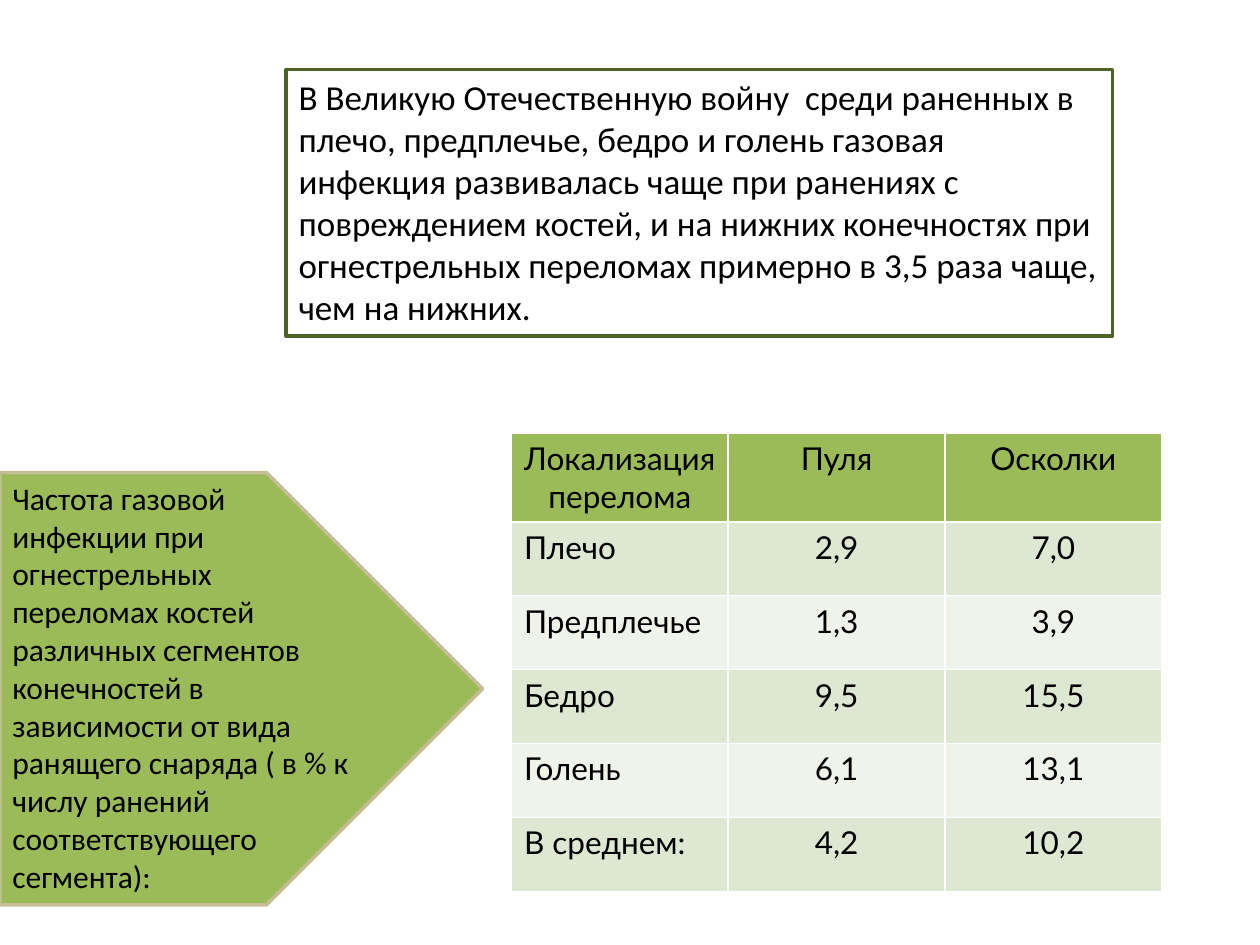
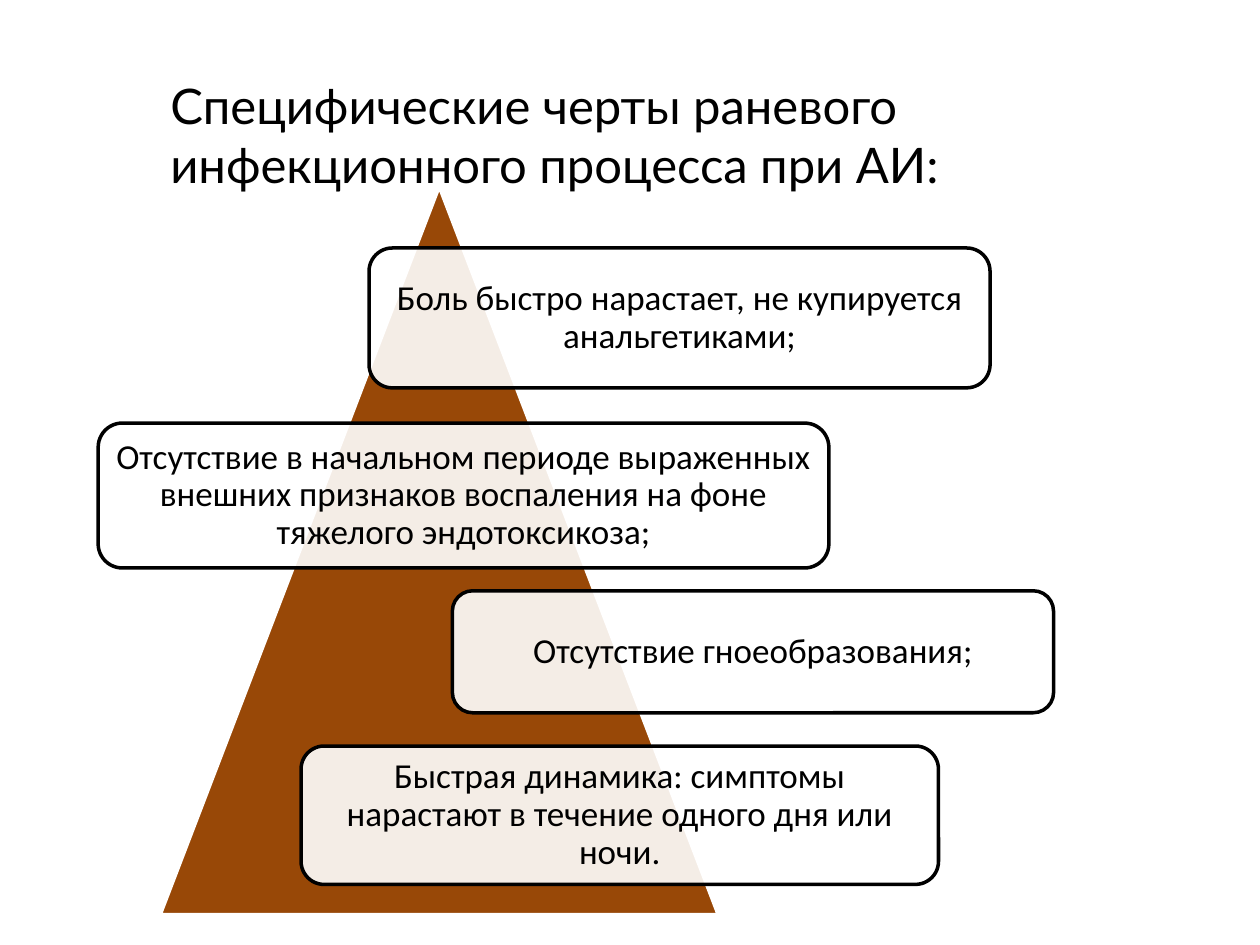
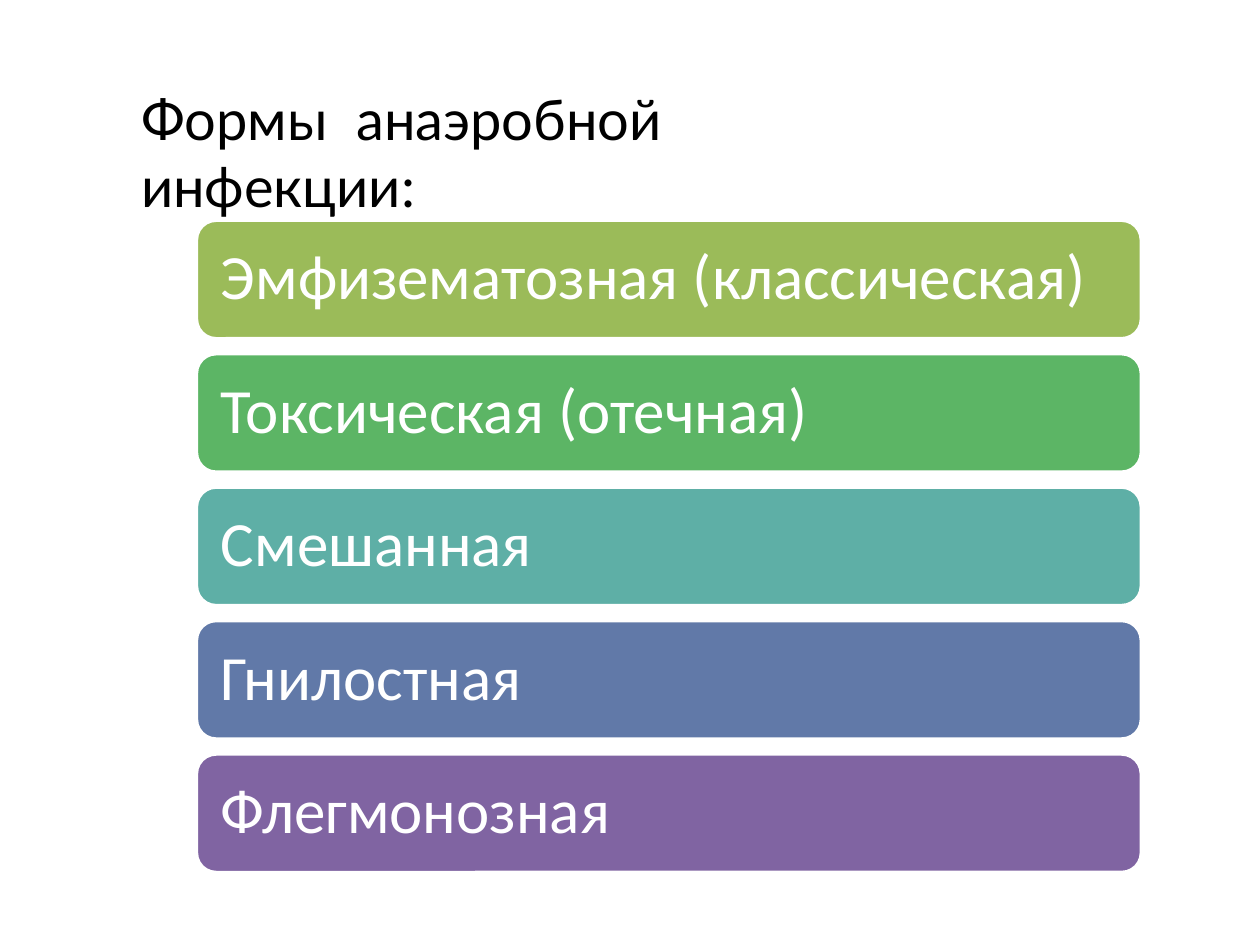
from lxml import etree
from pptx import Presentation
from pptx.dml.color import RGBColor
from pptx.enum.shapes import MSO_SHAPE as Shape
from pptx.enum.text import MSO_ANCHOR as Anchor, MSO_AUTO_SIZE as AutoSize, PP_ALIGN as Align
from pptx.oxml.ns import qn
from pptx.util import Cm, Pt

BLACK = RGBColor(0x00, 0x00, 0x00)
WHITE = RGBColor(0xFF, 0xFF, 0xFF)
GREEN = RGBColor(0x9B, 0xBB, 0x59)
DARK_GREEN = RGBColor(0x4F, 0x62, 0x28)
BAND_DARK = RGBColor(0xDE, 0xE7, 0xD1)
BAND_LIGHT = RGBColor(0xEF, 0xF3, 0xEA)
SAND = RGBColor(0xC4, 0xBD, 0x97)
BROWN = RGBColor(0x98, 0x48, 0x07)
EMERALD = RGBColor(0x5C, 0xB5, 0x65)
TEAL = RGBColor(0x5E, 0xAF, 0xA6)
BLUE = RGBColor(0x61, 0x79, 0xA8)
PURPLE = RGBColor(0x80, 0x64, 0xA2)

TITLE_ONLY, BLANK = 5, 6
BODY_FONT, TITLE_FONT = "Calibri", "Lato"


def write(text_frame, text, size, font=BODY_FONT, color=BLACK, align=Align.LEFT,
          anchor=Anchor.TOP, spacing=1.0, inset=None):
    """Fill a text frame with one formatted paragraph."""
    text_frame.text = text
    frame_format = {"word_wrap": True, "auto_size": AutoSize.NONE, "vertical_anchor": anchor}
    if inset is not None:
        for side in ("left", "top", "right", "bottom"):
            frame_format[f"margin_{side}"] = Cm(inset)
    paragraph = text_frame.paragraphs[0]
    run_font = paragraph.runs[0].font
    run_font.color.rgb = color
    formats = (
        (text_frame, frame_format),
        (paragraph, {"alignment": align, "line_spacing": spacing}),
        (run_font, {"name": font, "size": Pt(size), "bold": False}),
    )
    for target, values in formats:
        for name, value in values.items():
            setattr(target, name, value)


def add_box(slide, kind, left, top, width, height, fill, line):
    shape = slide.shapes.add_shape(kind, Cm(left), Cm(top), Cm(width), Cm(height))
    shape.shadow.inherit = False
    shape.fill.solid()
    shape.fill.fore_color.rgb = fill
    shape.line.color.rgb = line
    shape.line.width = Pt(2)
    return shape


presentation = Presentation()
presentation.slide_width, presentation.slide_height = Cm(25.4), Cm(19.05)

# Slide 1: frequency of gas infection
slide = presentation.slides.add_slide(presentation.slide_layouts[BLANK])

frequency_rows = [
    ("Локализация перелома", "Пуля", "Осколки"),
    ("Плечо", "2,9", "7,0"),
    ("Предплечье", "1,3", "3,9"),
    ("Бедро", "9,5", "15,5"),
    ("Голень", "6,1", "13,1"),
    ("В среднем:", "4,2", "10,2"),
]
table = slide.shapes.add_table(len(frequency_rows), 3, Cm(10.31), Cm(8.74),
                               Cm(13.11), Cm(9.2)).table
for column in table.columns:
    column.width = Cm(4.37)
for row_index, values in enumerate(frequency_rows):
    table.rows[row_index].height = Cm(1.49 if row_index else 1.7)
    row_fill = (BAND_DARK if row_index % 2 else BAND_LIGHT) if row_index else GREEN
    for column_index, value in enumerate(values):
        cell = table.cell(row_index, column_index)
        cell.fill.solid()
        cell.fill.fore_color.rgb = row_fill
        is_row_label = row_index and column_index == 0
        write(cell.text_frame, value, 18, TITLE_FONT,
              align=Align.LEFT if is_row_label else Align.CENTER)

pointer = add_box(slide, Shape.PENTAGON, 0, 9.53, 9.73, 8.71, GREEN, SAND)
write(pointer.text_frame,
      "Частота газовой инфекции при огнестрельных переломах костей различных сегментов "
      "конечностей в зависимости от вида ранящего снаряда ( в % к числу ранений "
      "соответствующего сегмента):", 18)

summary = add_box(slide, Shape.RECTANGLE, 5.77, 1.4, 16.66, 5.38, WHITE, DARK_GREEN)
write(summary.text_frame,
      "В Великую Отечественную войну  среди раненных в плечо, предплечье, бедро и голень "
      "газовая инфекция развивалась чаще при ранениях с повреждением костей, и на нижних "
      "конечностях при огнестрельных переломах примерно в 3,5 раза чаще, чем на нижних.", 20)

# Slides 2 and 3: titles
titles = [
    ("Специфические черты раневого инфекционного процесса при АИ:", 28,
     (3.18, 1.4, 18.06, 2.64)),
    ("Формы  анаэробной инфекции:", 32, (2.59, 1.57, 15.85, 1.63)),
]
titled_slides = []
for text, size, place in titles:
    slide = presentation.slides.add_slide(presentation.slide_layouts[TITLE_ONLY])
    title = slide.shapes.title
    for name, value in zip(("left", "top", "width", "height"), place):
        setattr(title, name, Cm(value))
    write(title.text_frame, text, size, TITLE_FONT)
    titled_slides.append(slide)
features_slide, forms_slide = titled_slides

# Slide 2: features over a triangle
add_box(features_slide, Shape.ISOSCELES_TRIANGLE, 3.23, 3.76, 11.25, 14.68, BROWN, WHITE)
features = [
    ("Боль быстро нарастает, не купируется анальгетиками;", 7.44, 5, 12.52, 2.82),
    ("Отсутствие в начальном периоде выраженных внешних признаков воспаления на фоне "
     "тяжелого эндотоксикоза;", 1.98, 8.53, 14.73, 2.92),
    ("Отсутствие гноеобразования;", 9.12, 11.91, 12.12, 2.46),
    ("Быстрая динамика: симптомы нарастают в течение одного дня или ночи.",
     6.07, 15.04, 12.85, 2.79),
]
for text, *place in features:
    feature = add_box(features_slide, Shape.ROUNDED_RECTANGLE, *place, WHITE, BLACK)
    fill_color = feature.fill._xPr.find(qn("a:solidFill"))[0]
    etree.SubElement(fill_color, qn("a:alpha"), val="90000")
    write(feature.text_frame, text, 20, align=Align.CENTER, anchor=Anchor.MIDDLE,
          spacing=0.9, inset=0.2)

# Slide 3: forms as a stack of bars
forms = [
    ("Эмфизематозная (классическая)", GREEN),
    ("Токсическая (отечная)", EMERALD),
    ("Смешанная", TEAL),
    ("Гнилостная", BLUE),
    ("Флегмонозная", PURPLE),
]
for index, (text, color) in enumerate(forms):
    bar = add_box(forms_slide, Shape.ROUNDED_RECTANGLE, 3.96, 4.44 + 2.69 * index,
                  19.05, 2.39, color, WHITE)
    write(bar.text_frame, text, 36, color=WHITE, anchor=Anchor.MIDDLE, spacing=0.9, inset=0.38)

presentation.save("out.pptx")
